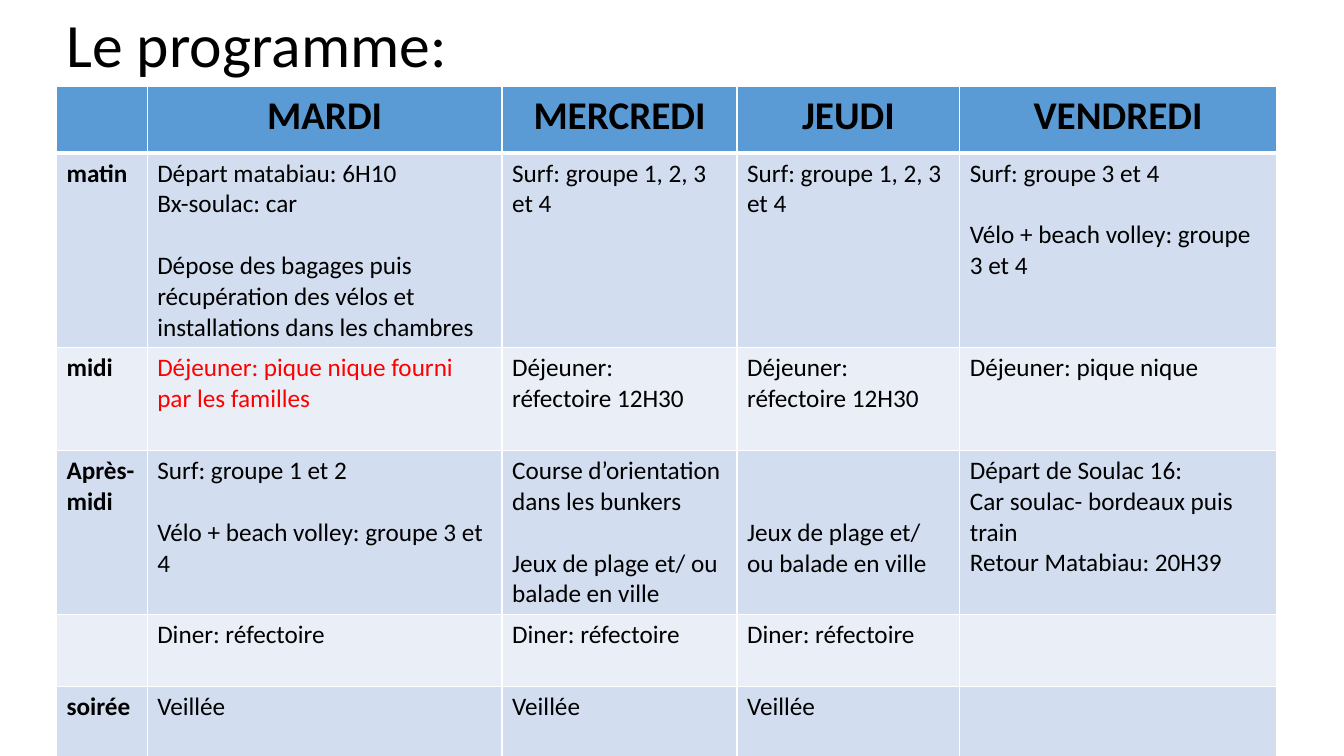
from lxml.etree import SubElement
from pptx import Presentation
from pptx.dml.color import RGBColor
from pptx.enum.text import MSO_ANCHOR, MSO_AUTO_SIZE, PP_ALIGN
from pptx.oxml.ns import qn
from pptx.util import Inches, Pt

# Content: "\n" starts a paragraph, "\n\n" a paragraph set one line lower
TITLE = "Le programme:"
DAYS = ["", "MARDI", "MERCREDI", "JEUDI", "VENDREDI"]
SURF_ALL = "Surf: groupe 1, 2, 3 et 4"
BIKE = "Vélo + beach volley: groupe 3 et 4"
BEACH = "Jeux de plage et/ ou balade en ville"
PICNIC = "Déjeuner: pique nique fourni par les familles"
DINNER = "Diner: réfectoire"
EVENING = "Veillée"
PROGRAMME = [
    ["matin",
     "Départ matabiau: 6H10\nBx-soulac: car\n\nDépose des bagages puis "
     "récupération des vélos et installations dans les chambres",
     SURF_ALL, SURF_ALL, "Surf: groupe 3 et 4\n\n" + BIKE],
    ["midi", PICNIC, "Déjeuner:\nréfectoire 12H30",
     "Déjeuner: réfectoire 12H30", "Déjeuner: pique nique"],
    ["Après-midi", "Surf: groupe 1 et 2\n\n" + BIKE,
     "Course d’orientation dans les bunkers\n\n" + BEACH, BEACH,
     "Départ de Soulac 16:\nCar soulac- bordeaux puis train\nRetour Matabiau: 20H39"],
    ["", DINNER, DINNER, DINNER, ""],
    ["soirée", EVENING, EVENING, EVENING, ""],
]
LOWERED_CELL = (3, 3)  # starts two lines down

COLORS = {"text": "000000", "alert": "FF0000", "header": "5B9BD5",
          "odd": "D2DEEF", "even": "EAEFF7", "border": "FFFFFF"}
FONT = "Calibri"
COLUMN_WIDTHS = [0.9, 3.52, 2.33, 2.21, 3.14]
ROW_HEIGHTS = [0.66, 1.93, 1.02, 1.62, 0.71, 0.7]
LEFT, TOP = 0.56, 0.86
LINE_HEIGHT = Pt(22)  # one line of 18 pt text


def write_text(frame, text, size=18, color="text", bold=False,
               align=PP_ALIGN.LEFT, line_spacing=1.0):
    paragraph = None
    for block in text.split("\n\n"):
        for number, line in enumerate(block.split("\n")):
            first = paragraph is None
            paragraph = frame.paragraphs[0] if first else frame.add_paragraph()
            paragraph.alignment = align
            paragraph.line_spacing = line_spacing
            paragraph.space_before = LINE_HEIGHT if number == 0 and not first else Pt(0)
            run = paragraph.add_run()
            run.text = line
            run.font.name = FONT
            run.font.size = Pt(size)
            run.font.bold = bold
            run.font.color.rgb = RGBColor.from_string(COLORS[color])


def set_borders(cell, top=1, bottom=1):
    properties = cell._tc.get_or_add_tcPr()
    sides = [("a:lnL", 1), ("a:lnR", 1), ("a:lnT", top), ("a:lnB", bottom)]
    for position, (tag, width) in enumerate(sides):
        line = SubElement(properties, qn(tag), w=str(Pt(width)))
        fill = SubElement(line, qn("a:solidFill"))
        SubElement(fill, qn("a:srgbClr"), val=COLORS["border"])
        properties.insert(position, line)


presentation = Presentation()
presentation.slide_width = Inches(13.33)
presentation.slide_height = Inches(7.5)
slide = presentation.slides.add_slide(presentation.slide_layouts[5])

# Title
title = slide.shapes.title
title.left, title.top = Inches(LEFT), Inches(0.08)
title.width, title.height = Inches(11.95), Inches(0.78)
title.text_frame.auto_size = MSO_AUTO_SIZE.NONE
title.text_frame.vertical_anchor = MSO_ANCHOR.MIDDLE
write_text(title.text_frame, TITLE, size=44, line_spacing=0.9)

# Timetable
rows = [DAYS] + PROGRAMME
table = slide.shapes.add_table(
    len(rows), len(DAYS), Inches(LEFT), Inches(TOP),
    Inches(sum(COLUMN_WIDTHS)), Inches(sum(ROW_HEIGHTS))).table
for column, width in zip(table.columns, COLUMN_WIDTHS):
    column.width = Inches(width)
for row, height in zip(table.rows, ROW_HEIGHTS):
    row.height = Inches(height)

for row_index, texts in enumerate(rows):
    is_header = row_index == 0
    band = "header" if is_header else "odd" if row_index % 2 else "even"
    for column_index, text in enumerate(texts):
        cell = table.cell(row_index, column_index)
        cell.fill.solid()
        cell.fill.fore_color.rgb = RGBColor.from_string(COLORS[band])
        set_borders(cell, top=3 if row_index == 1 else 1, bottom=3 if is_header else 1)
        if (row_index, column_index) == LOWERED_CELL:
            cell.margin_top = Inches(0.05) + 2 * LINE_HEIGHT
        if text:
            write_text(cell.text_frame, text, size=28 if is_header else 18,
                       color="alert" if text == PICNIC else "text",
                       bold=is_header or column_index == 0,
                       align=PP_ALIGN.CENTER if is_header else PP_ALIGN.LEFT)

presentation.save("out.pptx")
